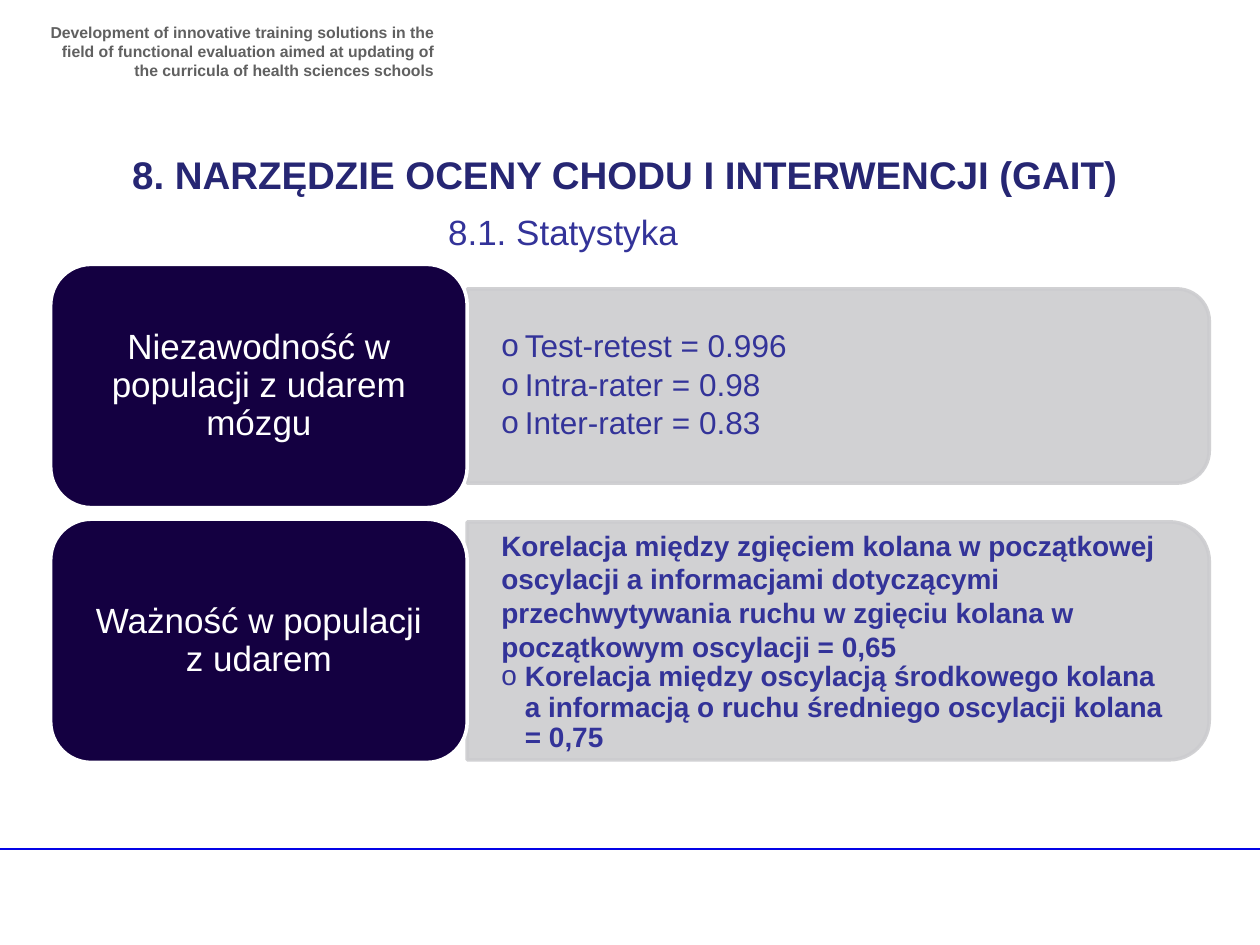
from pptx import Presentation
from pptx.dml.color import RGBColor
from pptx.enum import shapes, text
from pptx.oxml import ns
from pptx.util import Pt
from lxml import etree

NAVY, INDIGO, GREY, WHITE = "140041", "333399", "CCCCCF", "FFFFFF"


def rgb(value):
    return RGBColor.from_string(value)


def add_xml(parent, tag, **attributes):
    return etree.SubElement(parent, ns.qn(tag), attributes)


class SlideBuilder:
    font = "Arial"

    def __init__(self, slide):
        self.s = slide

    def style(self, p, size, color, bold=False, align=text.PP_ALIGN.LEFT):
        p.alignment = align
        for r in p.runs:
            r.font.name = self.font
            r.font.size = Pt(size)
            r.font.bold = bold
            r.font.color.rgb = rgb(color)

    def frame(self, sp, anchor, inset_x=7.2, inset_y=3.6):
        tf = sp.text_frame
        tf.word_wrap = True
        tf.auto_size = text.MSO_AUTO_SIZE.NONE
        tf.vertical_anchor = anchor
        tf.margin_left = tf.margin_right = Pt(inset_x)
        tf.margin_top = tf.margin_bottom = Pt(inset_y)
        return tf

    def place(self, sp, left, top, width, height):
        sp.left, sp.top, sp.width, sp.height = map(Pt, (left, top, width, height))

    def title(self, words, box, size, color):
        sp = self.s.shapes.title
        self.place(sp, *box)
        tf = self.frame(sp, text.MSO_ANCHOR.TOP)
        tf.text = words
        self.style(tf.paragraphs[0], size, color, True, text.PP_ALIGN.CENTER)

    def note(self, words, box, size, color, bold=False, align=text.PP_ALIGN.LEFT):
        sp = self.s.shapes.add_textbox(*map(Pt, box))
        tf = self.frame(sp, text.MSO_ANCHOR.TOP)
        tf.text = words
        self.style(tf.paragraphs[0], size, color, bold, align)

    def rule(self, x1, x2, y, color):
        line = self.s.shapes.add_connector(
            shapes.MSO_CONNECTOR.STRAIGHT, Pt(x1), Pt(y), Pt(x2), Pt(y))
        line.line.color.rgb = rgb(color)
        line.line.width = Pt(1)
        add_xml(line.element.spPr, "a:effectLst")

    def block(self, kind, box, fill, line):
        sp = self.s.shapes.add_shape(kind, *map(Pt, box))
        sp.shadow.inherit = False
        sp.fill.solid()
        sp.fill.fore_color.rgb = rgb(fill)
        sp.line.color.rgb = rgb(line)
        sp.line.width = Pt(2)
        return sp

    def panel(self, left, middle, width, height):
        box = (left + (width - height) / 2, middle - width / 2, height, width)
        sp = self.block(shapes.MSO_SHAPE.ROUND_2_SAME_RECTANGLE, box, GREY, GREY)
        sp.rotation = 90
        for color in sp.element.spPr.iter(ns.qn("a:srgbClr")):
            add_xml(color, "a:alpha", val="90000")

    def label(self, words, left, middle, width, height):
        box = (left, middle - height / 2, width, height)
        sp = self.block(shapes.MSO_SHAPE.ROUNDED_RECTANGLE, box, NAVY, WHITE)
        tf = self.frame(sp, text.MSO_ANCHOR.MIDDLE, 12.5, 9.5)
        tf.text = words
        p = tf.paragraphs[0]
        p.line_spacing = 0.9
        self.style(p, 20, WHITE, align=text.PP_ALIGN.CENTER)

    def body(self, sp, items, left, middle, width, height, size, bold, gap):
        sp.element.getparent().append(sp.element)
        self.place(sp, left, middle - height / 2, width, height)
        tf = self.frame(sp, text.MSO_ANCHOR.MIDDLE, 19.5, 10)
        tf.text = "\n".join(words for words, _ in items)
        for p, (_, bulleted) in zip(tf.paragraphs, items):
            p.space_before = Pt(0)
            p.space_after = Pt(gap)
            p.line_spacing = 0.9 if bulleted else 1.0
            indent = Pt(13.5) if bulleted else 0
            pPr = p._p.get_or_add_pPr()
            pPr.set("marL", str(indent))
            pPr.set("indent", str(-indent))
            if bulleted:
                add_xml(pPr, "a:buFont", typeface=self.font)
                add_xml(pPr, "a:buChar", char="o")
            else:
                add_xml(pPr, "a:buNone")
            self.style(p, size, INDIGO, bold)


def main():
    prs = Presentation()
    prs.slide_width, prs.slide_height = Pt(720), Pt(540)
    slide = prs.slides.add_slide(prs.slide_layouts[3])
    bodies = [sp for sp in slide.placeholders if sp.placeholder_format.idx]
    b = SlideBuilder(slide)

    b.rule(-3.6, 720, 485.3, "0404E6")
    b.note("Development of innovative training solutions in the ﬁeld of functional "
           "evaluation aimed at updating of the curricula of health sciences schools",
           (20, 9.4, 235, 34), 9, "606060", True, text.PP_ALIGN.RIGHT)
    b.note("8.1. Statystyka", (249, 116.6, 224, 55), 20, INDIGO)
    b.title("8. NARZĘDZIE OCENY CHODU I INTERWENCJI (GAIT)",
            (48, 82.8, 618, 34), 22, "262673")

    rows = [
        ("Niezawodność w populacji z udarem mózgu", 111, 100, 18, False, 2.7,
         [("Test-retest = 0.996", True),
          ("Intra-rater = 0.98", True),
          ("Inter-rater = 0.83", True)]),
        ("Ważność w populacji z udarem", 136, 123, 16, True, 0,
         [("Korelacja między zgięciem kolana w początkowej oscylacji a informacjami "
           "dotyczącymi przechwytywania ruchu w zgięciu kolana w początkowym "
           "oscylacji = 0,65", False),
          ("Korelacja między oscylacją środkowego kolana a informacją o ruchu "
           "średniego oscylacji kolana = 0,75", True)]),
    ]
    left, label_width, panel_width = 29, 238, 424
    for i, (name, panel_height, body_height, size, bold, gap, items) in enumerate(rows):
        middle = 220.6 + i * 145.6
        panel_left = left + label_width
        b.panel(panel_left, middle, panel_width, panel_height)
        b.body(bodies[i], items, panel_left, middle, 418, body_height, size, bold, gap)
        b.label(name, left, middle, label_width, 139)

    prs.save("out.pptx")


if __name__ == "__main__":
    main()
